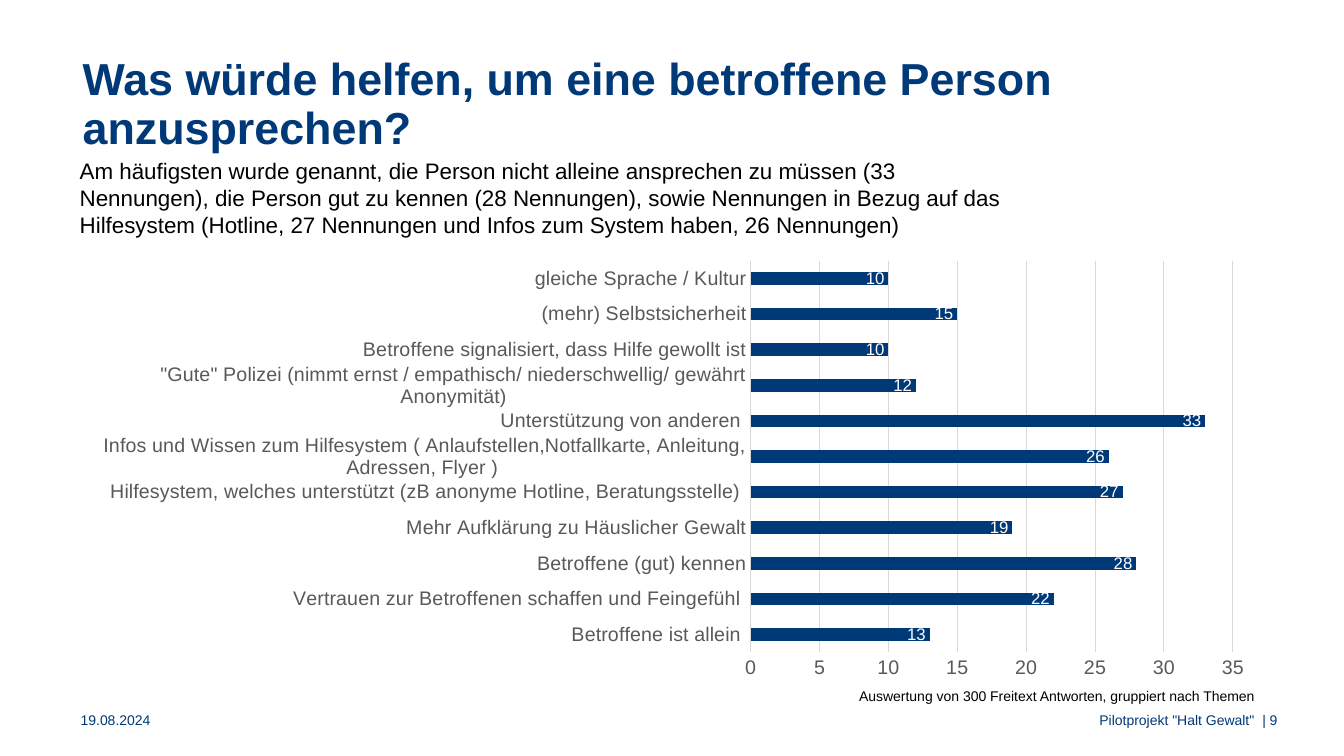
from dataclasses import dataclass

from lxml import etree
from pptx import Presentation
from pptx.chart.data import CategoryChartData
from pptx.dml.color import RGBColor
from pptx.enum.chart import XL_CHART_TYPE, XL_LABEL_POSITION, XL_TICK_MARK
from pptx.enum.text import MSO_ANCHOR, MSO_AUTO_SIZE, PP_ALIGN
from pptx.oxml.ns import qn
from pptx.util import Emu, Inches, Pt

LEFT, RIGHT = PP_ALIGN.LEFT, PP_ALIGN.RIGHT
TOP, MIDDLE = MSO_ANCHOR.TOP, MSO_ANCHOR.MIDDLE
NO_FIT = MSO_AUTO_SIZE.NONE
NO_TICK = XL_TICK_MARK.NONE
BAR = XL_CHART_TYPE.BAR_CLUSTERED
INSIDE_END = XL_LABEL_POSITION.INSIDE_END

NAVY = RGBColor(0x00, 0x39, 0x78)
BLACK = RGBColor(0x00, 0x00, 0x00)
WHITE = RGBColor(0xFF, 0xFF, 0xFF)
GREY = RGBColor(0x59, 0x59, 0x59)
GRID = RGBColor(0xD9, 0xD9, 0xD9)
FONT = "Arial"

prs = Presentation()
prs.slide_width, prs.slide_height = Inches(13.33), Inches(7.5)


@dataclass(frozen=True)
class Box:
    """Position in percent of the slide's width and height."""
    left: float
    top: float
    width: float
    height: float

    def emu(self) -> tuple[Emu, Emu, Emu, Emu]:
        w, h = prs.slide_width / 100, prs.slide_height / 100
        return (Emu(round(self.left * w)), Emu(round(self.top * h)),
                Emu(round(self.width * w)), Emu(round(self.height * h)))


@dataclass(frozen=True)
class Label:
    text: str
    box: Box
    size: int = 10
    color: RGBColor = NAVY
    bold: bool = False
    align: PP_ALIGN = LEFT
    anchor: MSO_ANCHOR = TOP
    spacing: float = 1.0
    after: int = 0
    inset: float = 0


TITLE = Label("Was würde helfen, um eine betroffene Person anzusprechen?",
              Box(6.15, 7.47, 88, 12.93), 32, bold=True, anchor=MIDDLE,
              spacing=0.9)

FOOTER_TOP, NOTE_TOP, LINE = 94.13, 90.93, 2.13
LABELS = [
    Label("Am häufigsten wurde genannt, die Person nicht alleine ansprechen zu "
          "müssen (33 Nennungen), die Person gut zu kennen (28 Nennungen), sowie "
          "Nennungen in Bezug auf das Hilfesystem (Hotline, 27 Nennungen und "
          "Infos zum System haben, 26 Nennungen)",
          Box(5.93, 20.8, 70.22, 7.33), 16, BLACK, after=6),
    Label("19.08.2024", Box(6, FOOTER_TOP, 14.18, LINE)),
    Label('Pilotprojekt "Halt Gewalt"', Box(20.78, FOOTER_TOP, 72.54, LINE),
          align=RIGHT),
    Label("| 9", Box(93.32, FOOTER_TOP, 4.28, LINE), inset=0.08),
    Label("Auswertung von 300 Freitext Antworten, gruppiert nach Themen",
          Box(20.78, NOTE_TOP, 72.54, LINE), color=BLACK, align=RIGHT),
]

CHART_BOX = Box(5.93, 33.33, 88.37, 57.6)
PLOT_SHARES = {"x": 0.565, "y": 0.02, "w": 0.406, "h": 0.9}
ANSWERS = {
    "Betroffene ist allein ": 13,
    "Vertrauen zur Betroffenen schaffen und Feingefühl ": 22,
    "Betroffene (gut) kennen": 28,
    "Mehr Aufklärung zu Häuslicher Gewalt": 19,
    "Hilfesystem, welches unterstützt (zB anonyme Hotline, Beratungsstelle) ": 27,
    "Infos und Wissen zum Hilfesystem ( Anlaufstellen,Notfallkarte, Anleitung, "
    "Adressen, Flyer ) ": 26,
    "Unterstützung von anderen ": 33,
    '"Gute" Polizei (nimmt ernst / empathisch/ niederschwellig/ gewährt '
    "Anonymität)": 12,
    "Betroffene signalisiert, dass Hilfe gewollt ist": 10,
    "(mehr) Selbstsicherheit": 15,
    "gleiche Sprache / Kultur": 10,
}


def style_font(font, size: int, color: RGBColor, bold: bool = False) -> None:
    for name, value in {"name": FONT, "size": Pt(size), "bold": bold}.items():
        setattr(font, name, value)
    font.color.rgb = color


def write(sp, label: Label) -> None:
    """Place a text shape and fill it with one formatted paragraph."""
    sp.left, sp.top, sp.width, sp.height = label.box.emu()
    tf = sp.text_frame
    frame_format = {"margin_left": Inches(label.inset), "margin_top": 0,
                    "margin_right": 0, "margin_bottom": 0, "word_wrap": True,
                    "auto_size": NO_FIT, "vertical_anchor": label.anchor}
    for name, value in frame_format.items():
        setattr(tf, name, value)
    p = tf.paragraphs[0]
    paragraph_format = {"alignment": label.align, "line_spacing": label.spacing,
                        "space_before": Pt(0), "space_after": Pt(label.after)}
    for name, value in paragraph_format.items():
        setattr(p, name, value)
    r = p.add_run()
    r.text = label.text
    style_font(r.font, label.size, label.color, label.bold)


def fix_plot_area(chart, shares: dict[str, float]) -> None:
    """Pin the inner plot area to shares of the chart frame."""
    plot_area = chart.plots[0]._element.getparent()
    for old in plot_area.findall(qn("c:layout")):
        plot_area.remove(old)
    layout = etree.Element(qn("c:layout"))
    plot_area.insert(0, layout)
    manual = etree.SubElement(layout, qn("c:manualLayout"))
    settings = {"layoutTarget": "inner", "xMode": "edge", "yMode": "edge"}
    for tag, value in (settings | shares).items():
        etree.SubElement(manual, qn(f"c:{tag}")).set("val", str(value))


def add_answer_chart(s) -> None:
    data = CategoryChartData()
    data.categories = list(ANSWERS)
    data.add_series("Nennungen", list(ANSWERS.values()))
    chart = s.shapes.add_chart(BAR, *CHART_BOX.emu(), data).chart
    chart.has_legend = chart.has_title = False
    style_font(chart.font, 10, BLACK)

    # Axes and grid lines
    cat, val = chart.category_axis, chart.value_axis
    for axis in (cat, val):
        axis.major_tick_mark = axis.minor_tick_mark = NO_TICK
        style_font(axis.tick_labels.font, 14, GREY)
    cat.has_major_gridlines = False
    val.has_major_gridlines = True
    val.minimum_scale, val.maximum_scale, val.major_unit = 0, 35, 5
    val.format.line.fill.background()
    for line in (cat.format.line, val.major_gridlines.format.line):
        line.color.rgb = GRID
        line.width = Pt(0.75)

    # Bars and their values
    plot = chart.plots[0]
    plot.gap_width = 182
    plot.vary_by_categories = False
    fill = plot.series[0].format.fill
    fill.solid()
    fill.fore_color.rgb = NAVY
    plot.has_data_labels = True
    labels = plot.data_labels
    labels.show_value = True
    labels.position = INSIDE_END
    style_font(labels.font, 12, WHITE)
    fix_plot_area(chart, PLOT_SHARES)


def main() -> None:
    s = prs.slides.add_slide(prs.slide_layouts[5])
    write(s.shapes.title, TITLE)
    add_answer_chart(s)
    for label in LABELS:
        write(s.shapes.add_textbox(*label.box.emu()), label)
    prs.save("out.pptx")


if __name__ == "__main__":
    main()
